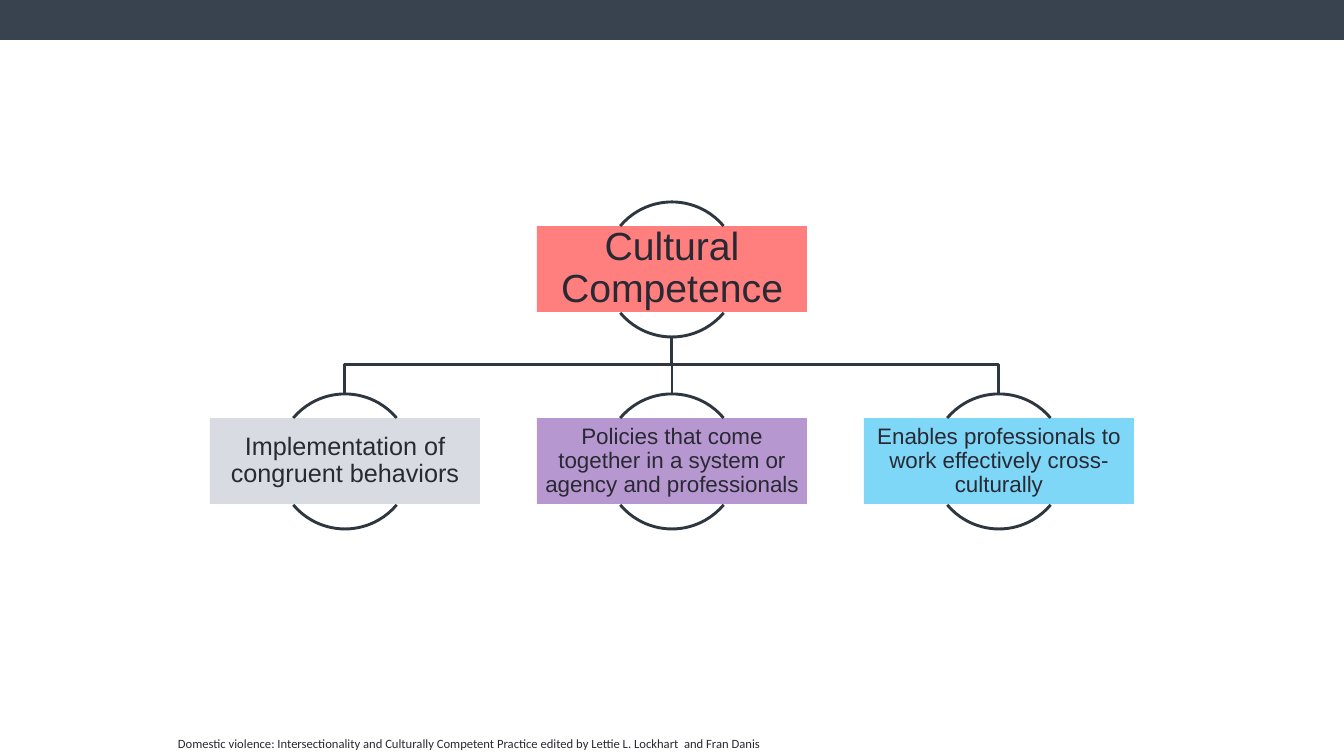
from lxml import etree
from pptx import Presentation
from pptx import util as u
from pptx.dml.color import RGBColor
from pptx.enum import shapes, text
from pptx.oxml.ns import qn

PX = 12192000 / 1344
INK, LINE = "292934", "2E363F"
SHAPE = shapes.MSO_SHAPE


def px(*lengths):
    return [u.Emu(round(length * PX)) for length in lengths]


def rgb(value):
    return RGBColor.from_string(value)


prs = Presentation()
prs.slide_width, prs.slide_height = px(1344, 756)
slide = prs.slides.add_slide(prs.slide_layouts[6])
items = slide.shapes

banner = items.add_shape(SHAPE.RECTANGLE, *px(0, 0, 1344, 40))
banner.shadow.inherit = False
banner.fill.solid()
banner.fill.fore_color.rgb = rgb("39434F")
banner.line.fill.background()

MIDDLE, STEP = 672, 327
PARENT_TOP, CHILD_TOP = 202, 394
CIRCLE, LABEL_W, LABEL_H = 135, 270, 86
PARENT_BOTTOM = PARENT_TOP + CIRCLE
BRANCH_Y = (PARENT_BOTTOM + CHILD_TOP) // 2

stem = items.add_connector(shapes.MSO_CONNECTOR.STRAIGHT, *px(MIDDLE, PARENT_BOTTOM, MIDDLE, CHILD_TOP))
etree.SubElement(stem._element.spPr, qn("a:effectLst"))
branches = [stem]
for end in (MIDDLE + STEP, MIDDLE - STEP):
    outline = items.build_freeform(MIDDLE, PARENT_BOTTOM, scale=PX)
    outline.add_line_segments([(MIDDLE, BRANCH_Y), (end, BRANCH_Y), (end, CHILD_TOP)], close=False)
    branch = outline.convert_to_shape()
    branch.shadow.inherit = False
    branch.fill.background()
    branches.append(branch)
for branch in branches:
    branch.line.color.rgb = rgb(LINE)
    branch.line.width = u.Pt(2.08)

topics = [
    (MIDDLE, PARENT_TOP, "FF0000", 28, 2, "Cultural Competence"),
    (MIDDLE - STEP, CHILD_TOP, "B2BAC6", 18, 1, "Implementation of congruent behaviors"),
    (MIDDLE, CHILD_TOP, "7030A0", 16, 1, "Policies that come together in a system or agency and professionals"),
    (MIDDLE + STEP, CHILD_TOP, "00B0F0", 16, 1, "Enables professionals to work effectively cross-culturally"),
]
for center, top, color, size, inset, wording in topics:
    for start, stop in ((132, 192), (24, 84)):
        arc = items.add_shape(SHAPE.ARC, *px(center - CIRCLE / 2, top, CIRCLE, CIRCLE))
        arc.adjustments[0], arc.adjustments[1] = start, stop
        arc.shadow.inherit = False
        arc.fill.background()
        arc.line.color.rgb = rgb(LINE)
        arc.line.width = u.Pt(2.08)

    label = items.add_shape(SHAPE.RECTANGLE, *px(center - LABEL_W / 2, top + 24, LABEL_W, LABEL_H))
    label.shadow.inherit = False
    label.fill.solid()
    label.fill.fore_color.rgb = rgb(color)
    tint = label._element.spPr.find(qn("a:solidFill"))[0]
    etree.SubElement(tint, qn("a:alpha"), val="50000")
    label.line.fill.background()
    frame = label.text_frame
    margin = px(inset)[0]
    frame_format = {
        "margin_left": margin, "margin_top": margin, "margin_right": margin, "margin_bottom": margin,
        "word_wrap": True, "vertical_anchor": text.MSO_ANCHOR.MIDDLE,
    }
    for key, value in frame_format.items():
        setattr(frame, key, value)
    paragraph = frame.paragraphs[0]
    paragraph.text = wording
    paragraph.alignment = text.PP_ALIGN.CENTER
    paragraph.line_spacing = 0.9
    paragraph.font.name, paragraph.font.size = "Arial", u.Pt(size)
    paragraph.font.color.rgb = rgb(INK)

citation = items.add_textbox(*px(168, 731, 605, 25))
citation.text_frame.word_wrap = True
credit = citation.text_frame.paragraphs[0]
credit.text = (
    "Domestic violence: Intersectionality and Culturally Competent Practice "
    "edited by Lettie L. Lockhart  and Fran Danis"
)
credit.font.name, credit.font.size = "Calibri", u.Pt(9)
credit.font.color.rgb = rgb(INK)

prs.save("out.pptx")
